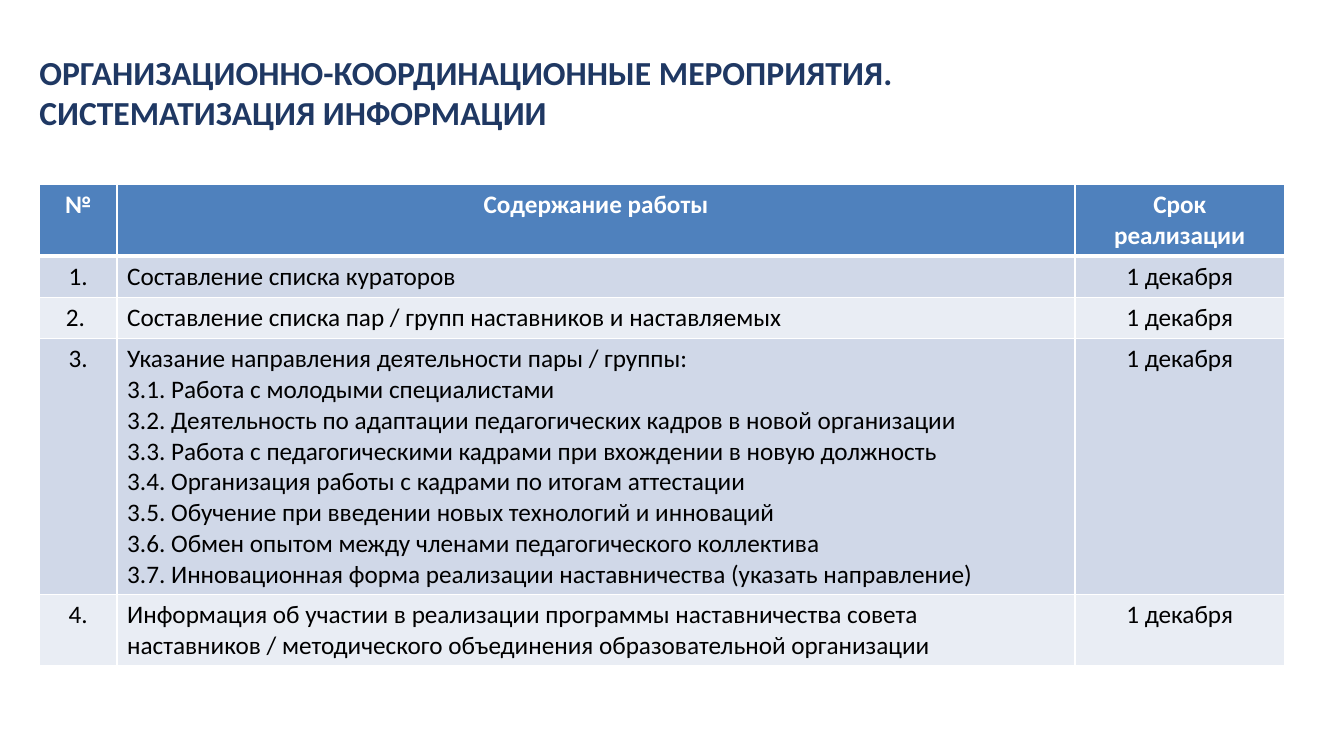
"""Build the slide with the schedule of organisational and coordination activities."""
from dataclasses import dataclass

from lxml import etree
from pptx import Presentation
from pptx.dml.color import RGBColor
from pptx.enum.text import MSO_ANCHOR, MSO_AUTO_SIZE, PP_ALIGN
from pptx.oxml.ns import qn
from pptx.util import Inches, Pt

LEFT, CENTER = PP_ALIGN.LEFT, PP_ALIGN.CENTER
TOP = MSO_ANCHOR.TOP
GROW = MSO_AUTO_SIZE.SHAPE_TO_FIT_TEXT
TITLE_ONLY = 5

WIDTH, HEIGHT = Inches(13.33), Inches(7.5)
FONT = "Calibri"
COLORS = {
    "title": "1F3863",
    "header": "4F81BD",
    "odd": "D0D8E8",
    "even": "E9EDF4",
    "light": "FFFFFF",
    "text": "000000",
}

MARGIN = 2.93
COLUMN_SHARES = (5.78, 71.27, 15.6)
COLUMN_ALIGNMENTS = (CENTER, LEFT, CENTER)
TABLE_TOP = 24.4
TITLE = "ОРГАНИЗАЦИОННО-КООРДИНАЦИОННЫЕ МЕРОПРИЯТИЯ. \vСИСТЕМАТИЗАЦИЯ ИНФОРМАЦИИ"


@dataclass(frozen=True)
class Activity:
    number: str
    content: str
    deadline: str
    height_share: float


DIRECTIONS = "\n".join((
    "Указание направления деятельности пары / группы:",
    "3.1. Работа с молодыми специалистами",
    "3.2. Деятельность по адаптации педагогических кадров в новой организации",
    "3.3. Работа с педагогическими кадрами при вхождении в новую должность",
    "3.4. Организация работы с кадрами по итогам аттестации",
    "3.5. Обучение при введении новых технологий и инноваций",
    "3.6. Обмен опытом между членами педагогического коллектива",
    "3.7. Инновационная форма реализации наставничества (указать направление)",
))
COUNCIL = (
    "Информация об участии в реализации программы наставничества совета "
    "наставников / методического объединения образовательной организации"
)
DEADLINE = "1 декабря"
ACTIVITIES = (
    Activity("№", "Содержание работы", "Срок реализации", 9.47),
    Activity("1.", "Составление списка кураторов", DEADLINE, 5.47),
    Activity("2. ", "Составление списка пар / групп наставников и наставляемых", DEADLINE, 5.47),
    Activity("3.", DIRECTIONS, DEADLINE, 33.87),
    Activity("4.", COUNCIL, DEADLINE, 9.33),
)


def across(share: float) -> int:
    """Return a percentage of the slide's width."""
    return round(WIDTH * share / 100)


def down(share: float) -> int:
    """Return a percentage of the slide's height."""
    return round(HEIGHT * share / 100)


def format_text(frame, size: float, color: str, bold: bool, alignment) -> None:
    """Format every paragraph and run of a text frame."""
    for paragraph in frame.paragraphs:
        paragraph.alignment = alignment
        for run in paragraph.runs:
            run.font.name = FONT
            run.font.size = Pt(size)
            run.font.bold = bold
            run.font.color.rgb = RGBColor.from_string(COLORS[color])


def add_borders(cell, top: float, bottom: float) -> None:
    """Draw light borders of the given weights around a cell."""
    properties = cell._tc.get_or_add_tcPr()
    sides = (("a:lnL", 1), ("a:lnR", 1), ("a:lnT", top), ("a:lnB", bottom))
    for position, (tag, weight) in enumerate(sides):
        border = etree.Element(qn(tag), w=str(Pt(weight)))
        solid = etree.SubElement(border, qn("a:solidFill"))
        etree.SubElement(solid, qn("a:srgbClr"), val=COLORS["light"])
        properties.insert(position, border)


def add_title(slide) -> None:
    """Place and format the slide's title."""
    heading = slide.shapes.title
    heading.left, heading.top = across(MARGIN), down(6.8)
    heading.width, heading.height = across(92.05), down(10.8)
    frame = heading.text_frame
    frame.text = TITLE
    frame.word_wrap = True
    frame.auto_size = GROW
    frame.vertical_anchor = TOP
    frame.margin_left = frame.margin_top = frame.margin_right = frame.margin_bottom = 0
    format_text(frame, 24, "title", True, LEFT)


def add_schedule(slide) -> None:
    """Draw the table of activities and deadlines."""
    schedule = slide.shapes.add_table(
        len(ACTIVITIES), len(COLUMN_SHARES), across(MARGIN), down(TABLE_TOP),
        across(sum(COLUMN_SHARES)),
        down(sum(activity.height_share for activity in ACTIVITIES)),
    ).table
    for column, share in zip(schedule.columns, COLUMN_SHARES):
        column.width = across(share)
    for index, activity in enumerate(ACTIVITIES):
        schedule.rows[index].height = down(activity.height_share)
        is_header = index == 0
        fill = "header" if is_header else "odd" if index % 2 else "even"
        entries = (activity.number, activity.content, activity.deadline)
        for column, (entry, alignment) in enumerate(zip(entries, COLUMN_ALIGNMENTS)):
            cell = schedule.cell(index, column)
            cell.text_frame.text = entry
            cell.fill.solid()
            cell.fill.fore_color.rgb = RGBColor.from_string(COLORS[fill])
            add_borders(cell, 3 if index == 1 else 1, 3 if is_header else 1)
            format_text(cell.text_frame, 18, "light" if is_header else "text",
                        is_header, CENTER if is_header else alignment)


def main() -> None:
    """Build and save the presentation."""
    presentation = Presentation()
    presentation.slide_width, presentation.slide_height = WIDTH, HEIGHT
    slide = presentation.slides.add_slide(presentation.slide_layouts[TITLE_ONLY])
    add_title(slide)
    add_schedule(slide)
    presentation.save("out.pptx")


if __name__ == "__main__":
    main()
